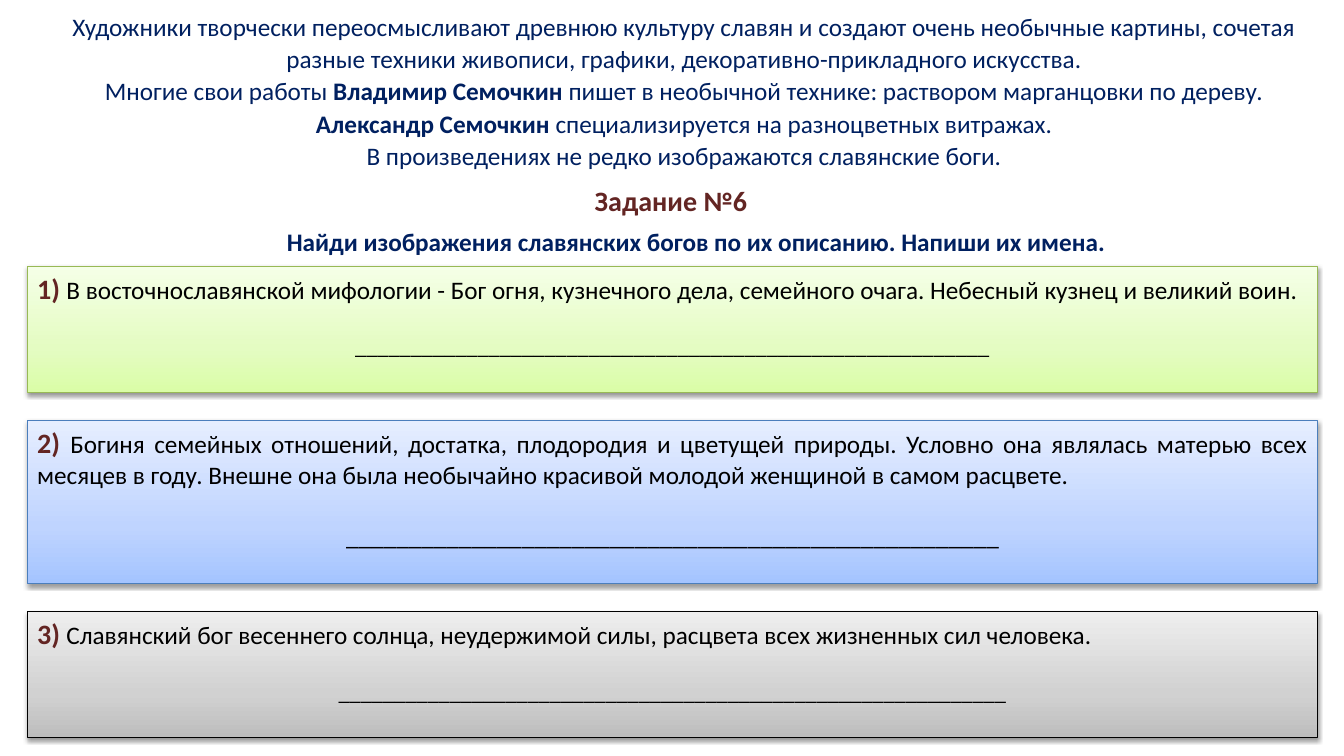
import copy
import pptx
import pptx.util
import pptx.dml.color
import pptx.enum.shapes
import pptx.enum.text
import pptx.oxml
import pptx.oxml.ns

PX = 9144  # 100 px to the inch
NAVY, WINE, BLACK = "002060", "632523", "000000"
ALIGN = pptx.enum.text.PP_ALIGN
ANCHOR = pptx.enum.text.MSO_ANCHOR
SHADOW = (
    f'<a:outerShdw {pptx.oxml.ns.nsdecls("a")} blurRad="40000" dist="20000" '
    'dir="5400000" rotWithShape="0"><a:srgbClr val="000000">'
    '<a:alpha val="38000"/></a:srgbClr></a:outerShdw>'
)


def color(code):
    return pptx.dml.color.RGBColor.from_string(code)


def style(font, size, code, bold=None):
    font.name = "Calibri"
    font.size = pptx.util.Pt(size)
    font.color.rgb = color(code)
    font.bold = bold


deck = pptx.Presentation()
deck.slide_width, deck.slide_height = 1333 * PX, 750 * PX
slide = deck.slides.add_slide(deck.slide_layouts[5])

title = slide.shapes.title
title.left, title.top, title.width, title.height = [n * PX for n in (-1, 178, 1333, 42)]
title.text_frame.text = "Задание №6"
title.text_frame.vertical_anchor = ANCHOR.MIDDLE
head = title.text_frame.paragraphs[0]
head.alignment = ALIGN.CENTER
style(head.font, 20, WINE, True)

# Each line is a list of (words, bold) runs
intro = [
    [("Художники творчески переосмысливают древнюю культуру славян и создают "
      "очень необычные картины, сочетая разные техники живописи, графики, "
      "декоративно-прикладного искусства.", False)],
    [("Многие свои работы ", False), ("Владимир Семочкин ", True),
     ("пишет в необычной технике: раствором марганцовки по дереву.", False)],
    [("Александр Семочкин ", True),
     ("специализируется на разноцветных витражах.", False)],
    [("В произведениях не редко изображаются славянские боги.", False)],
]
task = [[("Найди изображения славянских богов по их описанию. Напиши их имена.", True)]]

for place, lines in [((-13, 4, 1333, 172), intro), ((43, 217, 1245, 41), task)]:
    frame = slide.shapes.add_textbox(*[n * PX for n in place]).text_frame
    frame.word_wrap = True
    for i, line in enumerate(lines):
        para = frame.add_paragraph() if i else frame.paragraphs[0]
        para.alignment = ALIGN.CENTER
        para.line_spacing = 1.07
        para._p.get_or_add_pPr().set("marL", str(50 * PX))
        style(para.font, 18, NAVY)
        for words, bold in line:
            run = para.add_run()
            run.text = words
            run.font.bold = bold

# top, height, gradient from bottom to top, border, blanks, blank size, gap, text
cards = [
    (264, 125, ("DAFDA7", "E4FCC2", "F5FFE7"), "98B955", 57, 16, 19.5,
     "В восточнославянской мифологии - Бог огня, кузнечного дела, семейного "
     "очага. Небесный кузнец и великий воин."),
    (417, 162, ("A4C4FF", "BFD4FF", "E6EEFF"), "4B7EBC", 52, 18, 22,
     "Богиня семейных отношений, достатка, плодородия и цветущей природы. "
     "Условно она являлась матерью всех месяцев в году. Внешне она была "
     "необычайно красивой молодой женщиной в самом расцвете."),
    (607, 125, ("BDBDBD", "D1D1D1", "EEEEEE"), BLACK, 60, 16, 19.5,
     "Славянский бог весеннего солнца, неудержимой силы, расцвета всех "
     "жизненных сил человека."),
]

for num, (top, high, shades, edge, blanks, size, gap, words) in enumerate(cards, 1):
    card = slide.shapes.add_shape(
        pptx.enum.shapes.MSO_SHAPE.RECTANGLE, 27 * PX, top * PX, 1280 * PX, high * PX)
    card.fill.gradient()
    card.fill.gradient_angle = 90
    stops = card._element.spPr.find(".//" + pptx.oxml.ns.qn("a:gsLst"))
    stops.insert(1, copy.deepcopy(stops[0]))
    for stop, spot, shade in zip(card.fill.gradient_stops, (0, 0.35, 1), shades):
        stop.position = spot
        stop.color.rgb = color(shade)
    card.line.color.rgb = color(edge)
    card.line.width = pptx.util.Pt(0.75)
    card.shadow.inherit = False
    glow = card._element.spPr.find(pptx.oxml.ns.qn("a:effectLst"))
    glow.append(pptx.oxml.parse_xml(SHADOW))

    frame = card.text_frame
    frame.word_wrap = True
    frame.vertical_anchor = ANCHOR.TOP
    para = frame.paragraphs[0]
    para.alignment = ALIGN.JUSTIFY
    for text, pt, code, bold in [(f"{num}) ", 20, WINE, True), (words, 18, BLACK, False)]:
        run = para.add_run()
        run.text = text
        style(run.font, pt, code, bold)
    blank = frame.add_paragraph()
    blank.text = "_" * blanks
    blank.alignment = ALIGN.CENTER
    blank.space_before = pptx.util.Pt(gap)
    style(blank.font, size, BLACK)

deck.save("out.pptx")
